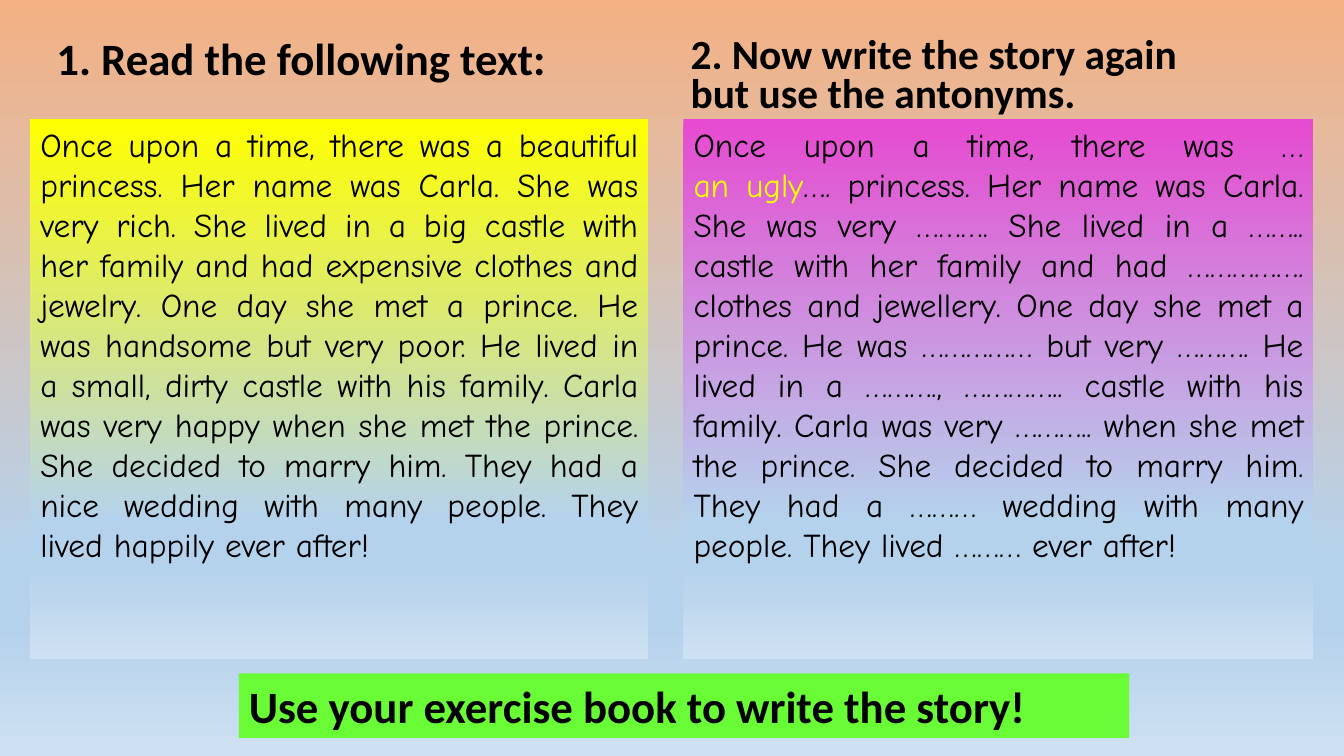
from dataclasses import dataclass

from lxml.etree import SubElement
from pptx import Presentation
from pptx.dml.color import RGBColor
from pptx.enum.shapes import MSO_SHAPE as Preset
from pptx.enum.text import MSO_ANCHOR as Anchor, MSO_AUTO_SIZE as AutoSize, PP_ALIGN as Align
from pptx.oxml.ns import qn
from pptx.util import Inches, Pt

COMPARISON_LAYOUT = 4


@dataclass(frozen=True)
class Theme:
    heading_font: str = "Calibri"
    story_font: str = "Comic Neue"
    heading_size: float = 32
    task_size: float = 29.6
    story_size: float = 23.8
    ink: str = "000000"
    answer: str = "FFFF00"
    banner: str = "69FB35"
    peach: str = "F4B183"
    yellow: str = "FFFF00"
    magenta: str = "E64AD0"
    # Every gradient fades from its own top colour into the same blues
    fade: tuple = ((74, "B5D2EC"), (83, "B5D2EC"), (100, "CEE1F2"))


@dataclass(frozen=True)
class Box:
    """Left, top, width and height as percentages of the slide."""
    left: float
    top: float
    width: float
    height: float


@dataclass(frozen=True)
class Heading:
    slot: int
    box: Box
    text: str
    size: float
    line_spacing: float


@dataclass(frozen=True)
class Story:
    slot: int
    box: Box
    top_color: str
    passages: tuple  # (text, colour) pairs


THEME = Theme()

HEADINGS = (
    Heading(1, Box(3.45, 0, 42.3, 12), "1. Read the following text:",
            THEME.heading_size, 0.9),
    Heading(3, Box(50.63, 4.13, 42.3, 12),
            "2. Now write the story again but use the antonyms.",
            THEME.task_size, 0.8),
)

STORIES = (
    Story(2, Box(2.25, 15.73, 45.98, 71.47), THEME.yellow, ((
        "Once upon a time, there was a beautiful princess. Her name was Carla. "
        "She was very rich. She lived in a big castle with her family and had "
        "expensive clothes and jewelry. One day she met a prince. He was handsome "
        "but very poor. He lived in a small, dirty castle with his family. Carla "
        "was very happy when she met the prince. She decided to marry him. They "
        "had a nice wedding with many people. They lived happily ever after!",
        THEME.ink),)),
    Story(4, Box(50.85, 15.73, 46.88, 71.47), THEME.magenta, (
        ("Once upon a time, there was\t…\v", THEME.ink),
        ("an ugly", THEME.answer),
        ("…. princess. Her name was Carla. She was very ………. She lived in a …….. "
         "castle with her family and had ……………. clothes and jewellery. One day she "
         "met a prince. He was …………… but very ………. He lived in a ………., ………….. "
         "castle with his family. Carla was very ……….. when she met the prince. She "
         "decided to marry him. They had a ……… wedding with many people. They lived "
         "……… ever after!", THEME.ink))),
)

BANNER_BOX = Box(17.78, 89.07, 66.23, 8.53)
BANNER_TEXT = "Use your exercise book to write the story!"

deck = Presentation()
deck.slide_width, deck.slide_height = Inches(13.33), Inches(7.5)


def emu(box: Box) -> tuple:
    across, down = deck.slide_width / 100, deck.slide_height / 100
    return (round(box.left * across), round(box.top * down),
            round(box.width * across), round(box.height * down))


def place(shape, box: Box) -> None:
    shape.left, shape.top, shape.width, shape.height = emu(box)


def fade_down(fill, owner, top_color: str) -> None:
    """Fill the owner with a vertical gradient from top_color into the blues."""
    fill.gradient()
    fill.gradient_angle = 270
    stops = next(owner.iter(qn("a:gsLst")))
    for stop in list(stops):
        stops.remove(stop)
    for percent, color in ((0, top_color), *THEME.fade):
        stop = SubElement(stops, qn("a:gs"), pos=str(percent * 1000))
        SubElement(stop, qn("a:srgbClr"), val=color)


def prepare_text(shape, anchor: Anchor):
    frame = shape.text_frame
    frame.word_wrap = True
    frame.auto_size = AutoSize.NONE
    frame.vertical_anchor = anchor
    return frame.paragraphs[0]


def drop_bullet(paragraph) -> None:
    properties = paragraph._p.get_or_add_pPr()
    properties.set("marL", "0")
    properties.set("indent", "0")
    SubElement(properties, qn("a:buNone"))


def set_font(font, name: str, size: float, bold: bool) -> None:
    font.name, font.size, font.bold = name, Pt(size), bold
    font.color.rgb = RGBColor.from_string(THEME.ink)


def draw_heading(slide, heading: Heading) -> None:
    shape = slide.placeholders[heading.slot]
    place(shape, heading.box)
    paragraph = prepare_text(shape, Anchor.BOTTOM)
    paragraph.text = heading.text
    paragraph.line_spacing = heading.line_spacing
    paragraph.space_before = Pt(10)
    drop_bullet(paragraph)
    set_font(paragraph.font, THEME.heading_font, heading.size, True)


def draw_story(slide, story: Story) -> None:
    shape = slide.placeholders[story.slot]
    place(shape, story.box)
    fade_down(shape.fill, shape.element, story.top_color)
    paragraph = prepare_text(shape, Anchor.TOP)
    paragraph.alignment = Align.JUSTIFY
    paragraph.space_before = Pt(12)
    drop_bullet(paragraph)
    # A right tab at the text edge carries the first gap
    tabs = SubElement(paragraph._p.get_or_add_pPr(), qn("a:tabLst"))
    SubElement(tabs, qn("a:tab"), pos=str(shape.width - Inches(0.21)), algn="r")
    set_font(paragraph.font, THEME.story_font, THEME.story_size, False)
    for text, color in story.passages:
        run = paragraph.add_run()
        run.text = text.rstrip("\v")
        run.font.color.rgb = RGBColor.from_string(color)
        if text.endswith("\v"):
            paragraph.add_line_break()


def draw_banner(slide) -> None:
    banner = slide.shapes.add_shape(Preset.RECTANGLE, *emu(BANNER_BOX))
    banner.shadow.inherit = False
    banner.fill.solid()
    banner.fill.fore_color.rgb = RGBColor.from_string(THEME.banner)
    banner.line.fill.background()
    paragraph = prepare_text(banner, Anchor.TOP)
    paragraph.text = BANNER_TEXT
    paragraph.alignment = Align.LEFT
    set_font(paragraph.font, THEME.heading_font, THEME.heading_size, True)


def main() -> None:
    slide = deck.slides.add_slide(deck.slide_layouts[COMPARISON_LAYOUT])
    fade_down(slide.background.fill, slide.element, THEME.peach)

    # The page has two column headings and no overall title
    unused_title = slide.shapes.title.element
    unused_title.getparent().remove(unused_title)

    for heading in HEADINGS:
        draw_heading(slide, heading)
    for story in STORIES:
        draw_story(slide, story)
    draw_banner(slide)
    deck.save("out.pptx")


if __name__ == "__main__":
    main()
